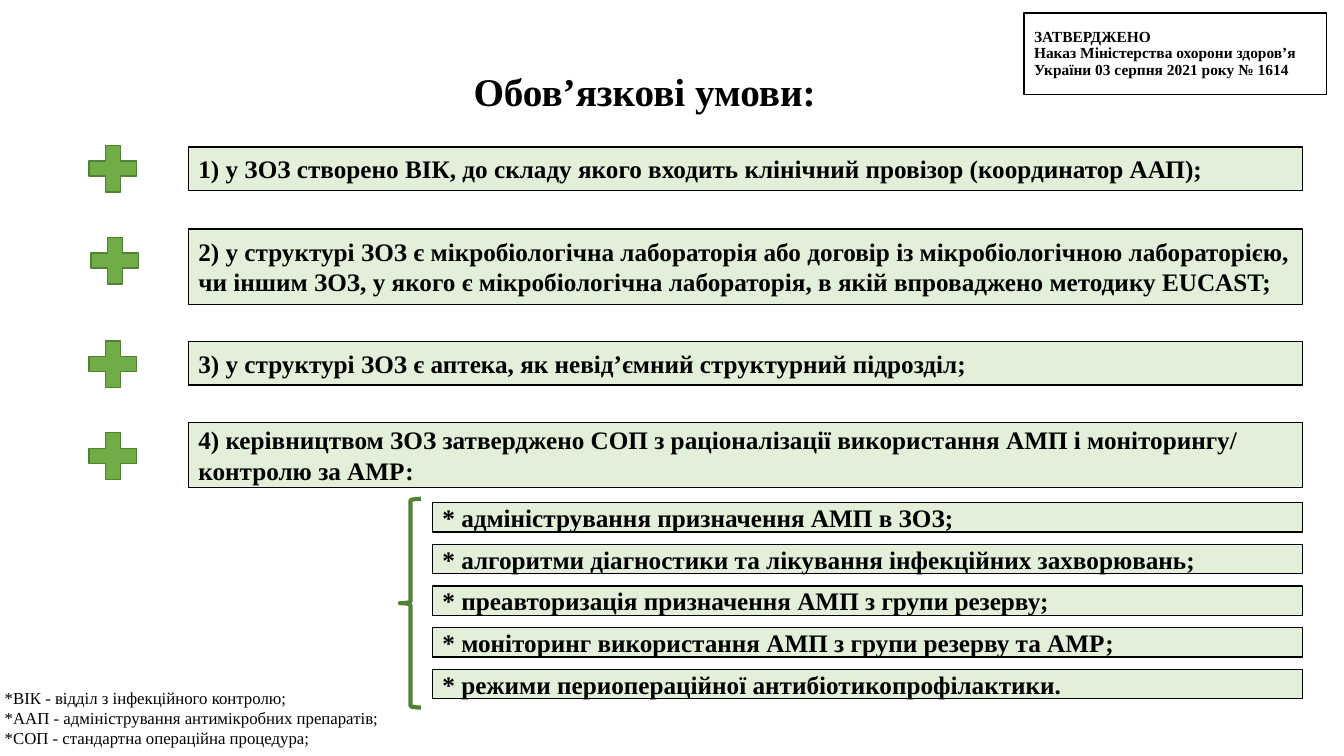
from pptx import Presentation
from pptx.dml.color import RGBColor
from pptx.enum import shapes, text
from pptx.util import Cm, Pt

# Content
TITLE = "Обов’язкові умови:"
APPROVAL = [
    "ЗАТВЕРДЖЕНО",
    "Наказ Міністерства охорони здоров’я України 03 серпня 2021 року № 1614",
]
# Each condition: text, box top, box height, plus left, plus top (cm)
CONDITIONS = [
    ("1) у ЗОЗ створено ВІК, до складу якого входить клінічний провізор "
     "(координатор ААП);", 3.71, 1.09, 2.03, 3.45),
    ("2) у структурі ЗОЗ є мікробіологічна лабораторія або договір із "
     "мікробіологічною лабораторією, чи іншим ЗОЗ, у якого є мікробіологічна "
     "лабораторія, в якій впроваджено методику EUCAST;", 5.77, 1.9, 2.08, 5.77),
    ("3) у структурі ЗОЗ є аптека, як невід’ємний структурний підрозділ;",
     8.61, 1.09, 2.03, 8.38),
    ("4) керівництвом ЗОЗ затверджено СОП з раціоналізації використання АМП "
     "і моніторингу/ контролю за АМР:", 10.64, 1.65, 2.03, 10.69),
]
PROCEDURES = [
    "* адміністрування призначення АМП в ЗОЗ;",
    "* алгоритми діагностики та лікування інфекційних захворювань;",
    "* преавторизація призначення АМП з групи резерву;",
    "* моніторинг використання АМП з групи резерву та АМР;",
    "* режими периопераційної антибіотикопрофілактики.",
]
ABBREVIATIONS = [
    "*ВІК - відділ з інфекційного контролю;",
    "*ААП - адміністрування антимікробних препаратів;",
    "*СОП - стандартна операційна процедура;",
]

THEME = {
    "font": "Times New Roman",
    "ink": "000000", "box": "E2F0D9",
    "plus": "70AD47", "plus_line": "538035", "brace": "548235",
    "title": 28, "body": 18, "note": 12, "approval": 11,
}

# Layout (cm)
RIGHT_EDGE = 32.82
CONDITION_LEFT = 4.75
PROCEDURE_LEFT, PROCEDURE_TOP = 10.9, 12.67
PROCEDURE_STEP, PROCEDURE_HEIGHT = 1.05, 0.74
PLUS_SIZE = (1.63, 1.6)


def write(shape, lines, size, bold=True, anchor=text.MSO_ANCHOR.MIDDLE,
          align=text.PP_ALIGN.LEFT, spacing=1.0):
    frame = shape.text_frame
    frame.word_wrap = True
    frame.vertical_anchor = anchor
    frame.text = "\n".join(lines)
    font_format = {"name": THEME["font"], "size": Pt(THEME[size]), "bold": bold}
    for paragraph in frame.paragraphs:
        paragraph.alignment = align
        paragraph.line_spacing = spacing
        for run in paragraph.runs:
            for name, value in font_format.items():
                setattr(run.font, name, value)
            run.font.color.rgb = RGBColor.from_string(THEME["ink"])


def add_shape(slide, kind, place, fill=None, line="ink", weight=1):
    shape = slide.shapes.add_shape(kind, *map(Cm, place))
    shape.shadow.inherit = False
    if fill:
        shape.fill.solid()
        shape.fill.fore_color.rgb = RGBColor.from_string(THEME[fill])
    else:
        shape.fill.background()
    shape.line.color.rgb = RGBColor.from_string(THEME[line])
    shape.line.width = Pt(weight)
    return shape


def main():
    kinds = shapes.MSO_SHAPE
    presentation = Presentation()
    presentation.slide_width, presentation.slide_height = Cm(33.87), Cm(19.05)
    slide = presentation.slides.add_slide(presentation.slide_layouts[6])

    # Title, approval stamp and abbreviations
    title = slide.shapes.add_textbox(*map(Cm, (11.33, 1.32, 9.83, 2.11)))
    write(title, [TITLE], "title", align=text.PP_ALIGN.CENTER, spacing=0.9)
    approval = add_shape(slide, kinds.RECTANGLE, (25.81, 0.33, 7.62, 2.06))
    write(approval, APPROVAL, "approval", spacing=0.9)
    notes = slide.shapes.add_textbox(*map(Cm, (-0.13, 17.2, 10.9, 1.8)))
    write(notes, ABBREVIATIONS, "note", bold=False, anchor=text.MSO_ANCHOR.TOP)

    # Conditions, each marked with a plus
    for condition, top, height, plus_left, plus_top in CONDITIONS:
        place = (CONDITION_LEFT, top, RIGHT_EDGE - CONDITION_LEFT, height)
        box = add_shape(slide, kinds.RECTANGLE, place, "box")
        write(box, [condition], "body")
        add_shape(slide, kinds.MATH_PLUS, (plus_left, plus_top, *PLUS_SIZE),
                  "plus", "plus_line")

    # Procedures under the last condition
    for index, procedure in enumerate(PROCEDURES):
        place = (PROCEDURE_LEFT, PROCEDURE_TOP + index * PROCEDURE_STEP,
                 RIGHT_EDGE - PROCEDURE_LEFT, PROCEDURE_HEIGHT)
        box = add_shape(slide, kinds.RECTANGLE, place, "box")
        write(box, [procedure], "body")
    add_shape(slide, kinds.LEFT_BRACE, (10.08, 12.57, 0.53, 5.26),
              line="brace", weight=3)

    presentation.save("out.pptx")


if __name__ == "__main__":
    main()
